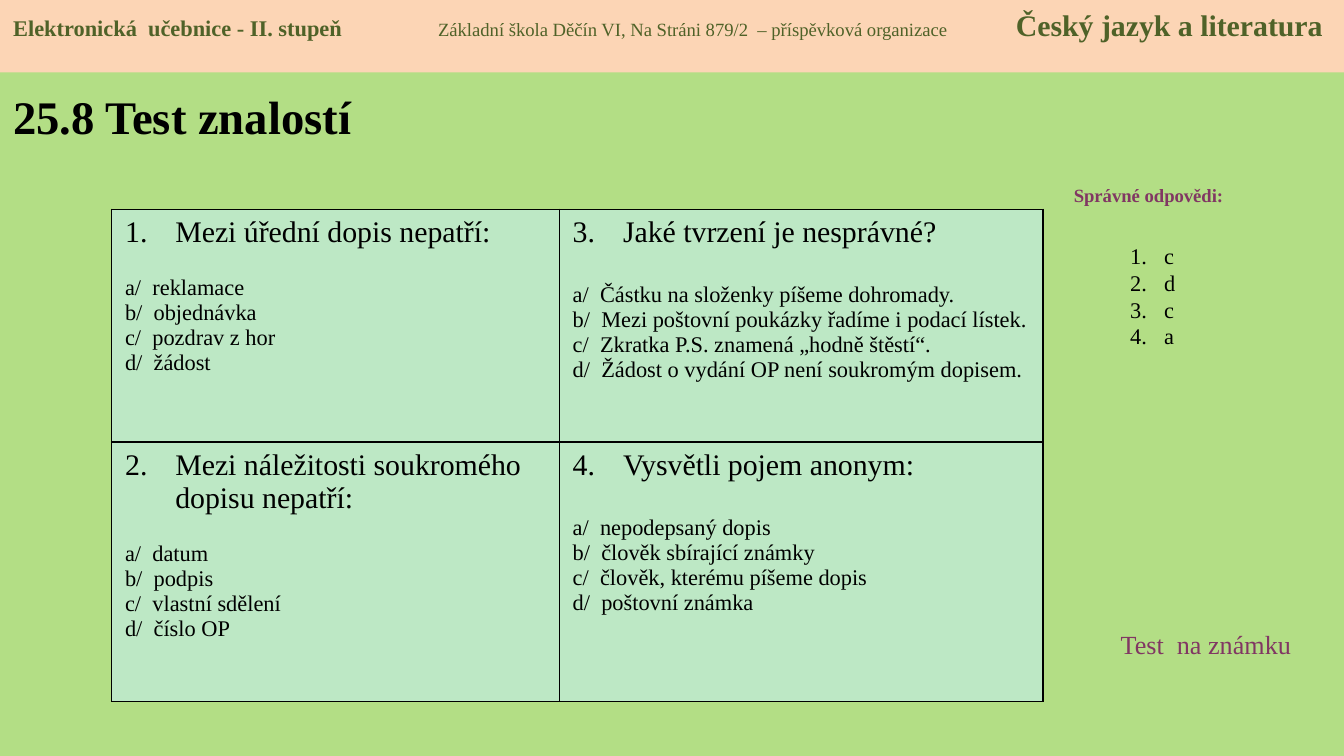
from lxml.etree import SubElement
from pptx import Presentation
from pptx.dml.color import RGBColor
from pptx.enum.shapes import MSO_SHAPE as Shape
from pptx.enum.text import MSO_ANCHOR as Anchor, PP_ALIGN as Align
from pptx.oxml.ns import qn
from pptx.util import Cm, Pt

FONT = "Times New Roman"
COLORS = {
    "background": "B3DE85",
    "banner": "FCD5B5",
    "banner_text": "4F6228",
    "cell": "BDE8C5",
    "black": "000000",
    "accent": "813763",
}

BANNER = [
    ("Elektronická  učebnice - II. stupeň", 12, True),
    ("Základní škola Děčín VI, Na Stráni 879/2  – příspěvková organizace", 10, False),
    ("Český jazyk a literatura", 16, True),
]
BANNER_TABS = [8.03, 18.95]
TITLE = "25.8 Test znalostí"
ANSWERS_HEADING = "Správné odpovědi:"
ANSWERS = ["c", "d", "c", "a"]
GRADE_NOTE = "Test  na známku"
QUESTIONS = [
    ("Mezi úřední dopis nepatří:",
     ["reklamace", "objednávka", "pozdrav z hor", "žádost"]),
    ("Mezi náležitosti soukromého dopisu nepatří:",
     ["datum", "podpis", "vlastní sdělení", "číslo OP"]),
    ("Jaké tvrzení je nesprávné?",
     ["Částku na složenky píšeme dohromady.",
      "Mezi poštovní poukázky řadíme i podací lístek.",
      "Zkratka P.S. znamená „hodně štěstí“.",
      "Žádost o vydání OP není soukromým dopisem."]),
    ("Vysvětli pojem anonym:",
     ["nepodepsaný dopis", "člověk sbírající známky",
      "člověk, kterému píšeme dopis", "poštovní známka"]),
]
COLUMN_WIDTHS = [8.46, 9.14]
ROW_HEIGHTS = [4.4, 4.9]
OPTION_GAPS = [14, 18]


def rgb(name):
    return RGBColor.from_string(COLORS[name])


def style(target, size, color="black", bold=False):
    font = target.font
    font.name, font.size, font.bold = FONT, Pt(size), bold
    font.color.rgb = rgb(color)


def paragraphs(frame, texts):
    frame.text = "\n".join(texts)
    return frame.paragraphs


def number(paragraph, start, indent):
    props = paragraph._p.get_or_add_pPr()
    props.set("marL", str(Cm(indent)))
    props.set("indent", str(-Cm(indent)))
    SubElement(props, qn("a:buFont"), typeface="+mj-lt")
    SubElement(props, qn("a:buAutoNum"), type="arabicPeriod", startAt=str(start))


def add_text(slide, box, texts, size, color="black", bold=False, anchor=Anchor.TOP):
    frame = slide.shapes.add_textbox(*map(Cm, box)).text_frame
    frame.word_wrap = True
    frame.vertical_anchor = anchor
    lines = paragraphs(frame, texts)
    for line in lines:
        style(line, size, color, bold)
    return lines


def add_banner(slide):
    banner = slide.shapes.add_shape(Shape.RECTANGLE, 0, 0, Cm(25.4), Cm(1.37))
    banner.shadow.inherit = False
    banner.fill.solid()
    banner.fill.fore_color.rgb = rgb("banner")
    banner.line.fill.background()
    frame = banner.text_frame
    frame.word_wrap = True
    frame.vertical_anchor = Anchor.TOP
    line = frame.paragraphs[0]
    line.alignment = Align.LEFT
    tabs = SubElement(line._p.get_or_add_pPr(), qn("a:tabLst"))
    for stop in BANNER_TABS:
        SubElement(tabs, qn("a:tab"), pos=str(Cm(stop)), algn="l")
    for index, (text, size, bold) in enumerate(BANNER):
        run = line.add_run()
        run.text = "\t" + text if index else text
        style(run, size, "banner_text", bold)


def add_borders(cell):
    props = cell._tc.get_or_add_tcPr()
    for index, side in enumerate(("lnL", "lnR", "lnT", "lnB")):
        border = props.makeelement(qn(f"a:{side}"), {"w": str(Pt(1))})
        fill = SubElement(border, qn("a:solidFill"))
        SubElement(fill, qn("a:srgbClr"), val=COLORS["black"])
        props.insert(index, border)


def add_questions(slide):
    table = slide.shapes.add_table(
        len(ROW_HEIGHTS), len(COLUMN_WIDTHS), Cm(2.11), Cm(3.96),
        Cm(sum(COLUMN_WIDTHS)), Cm(sum(ROW_HEIGHTS))).table
    for column, width in zip(table.columns, COLUMN_WIDTHS):
        column.width = Cm(width)
    for row, height in zip(table.rows, ROW_HEIGHTS):
        row.height = Cm(height)
    for index, (question, options) in enumerate(QUESTIONS):
        column, row = divmod(index, len(ROW_HEIGHTS))
        cell = table.cell(row, column)
        cell.fill.solid()
        cell.fill.fore_color.rgb = rgb("cell")
        add_borders(cell)
        choices = [f"{letter}/  {option}" for letter, option in zip("abcd", options)]
        heading, *lines = paragraphs(cell.text_frame, [question, *choices])
        style(heading, 16)
        number(heading, index + 1, 0.95)
        for line in lines:
            style(line, 12)
        lines[0].space_before = Pt(OPTION_GAPS[column])


def main():
    deck = Presentation()
    deck.slide_width, deck.slide_height = Cm(25.4), Cm(14.29)
    slide = deck.slides.add_slide(deck.slide_layouts[6])
    slide.background.fill.solid()
    slide.background.fill.fore_color.rgb = rgb("background")

    add_text(slide, (0, 1.37, 8.1, 1.65), [TITLE], 25, bold=True, anchor=Anchor.MIDDLE)
    heading = add_text(slide, (19.71, 3.35, 3.99, 0.69), [ANSWERS_HEADING], 10, "accent", True)
    heading[0].alignment = Align.CENTER
    add_questions(slide)
    answers = add_text(slide, (21.11, 4.45, 1.4, 2.82), ANSWERS, 12)
    for answer in answers:
        answer.line_spacing = Pt(14.4)
        number(answer, 1, 0.64)
    add_text(slide, (20.93, 11.76, 3.99, 0.86), [GRADE_NOTE], 14, "accent")
    add_banner(slide)
    deck.save("out.pptx")


if __name__ == "__main__":
    main()
